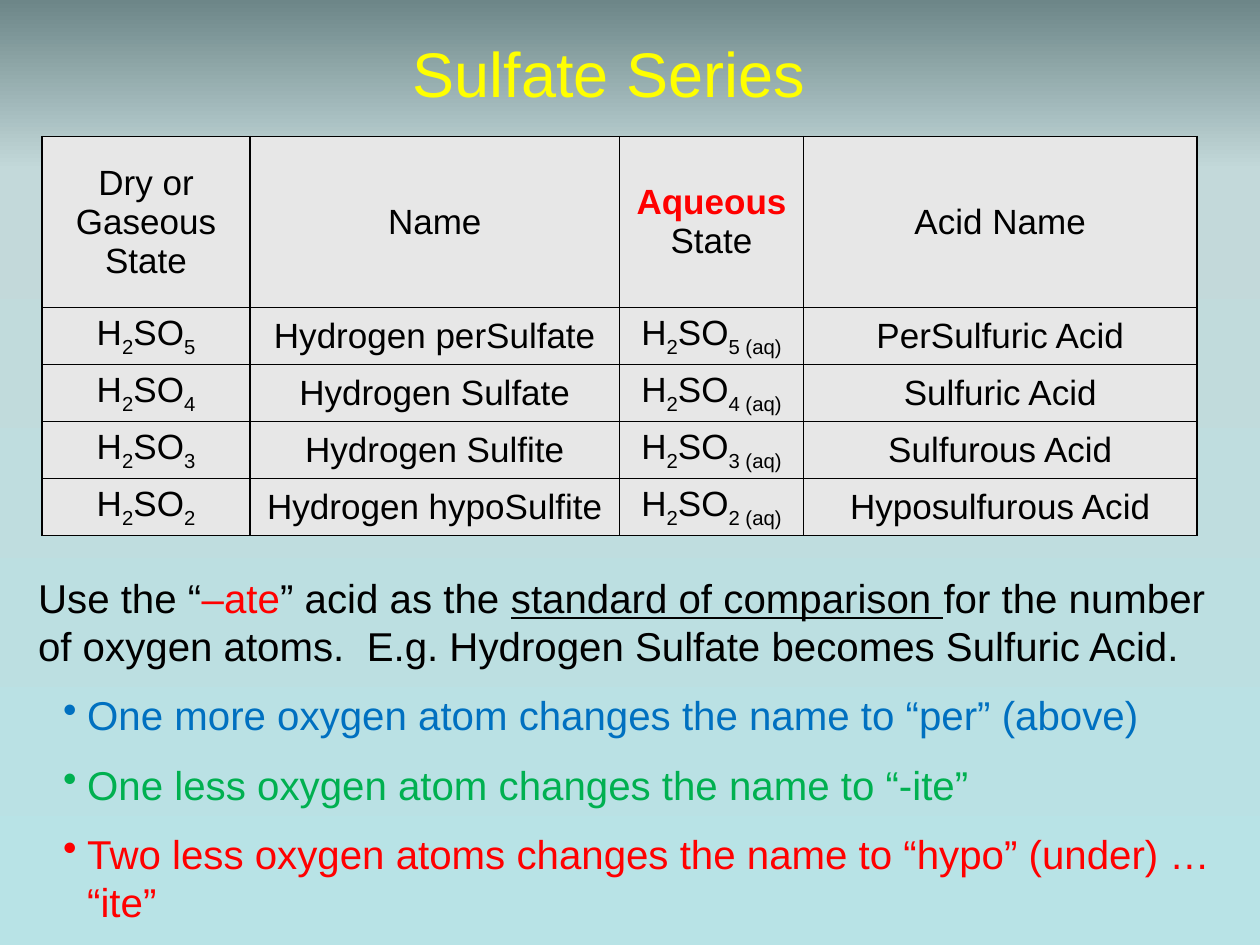
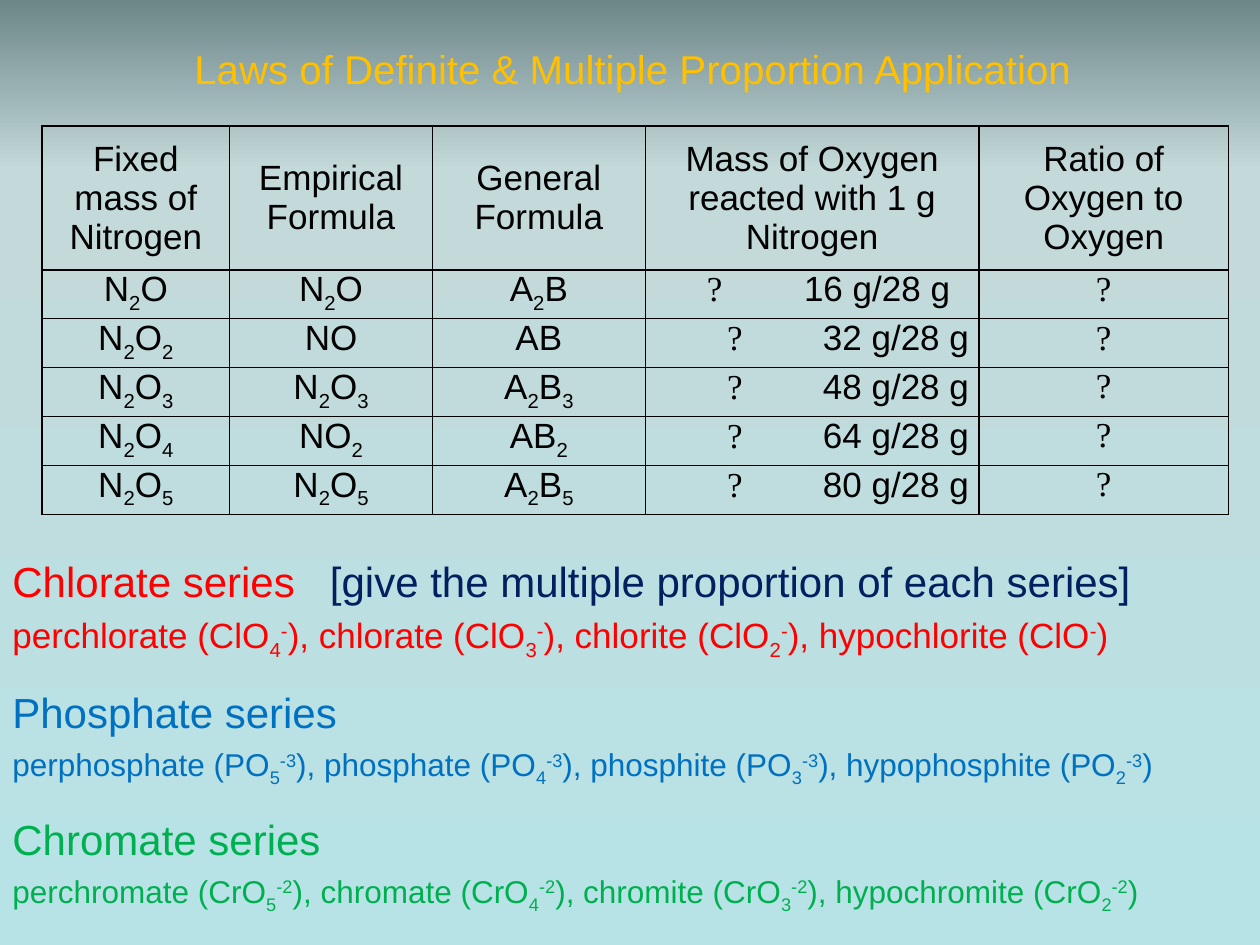
from dataclasses import dataclass

from pptx import Presentation, util as u
from pptx.dml.color import RGBColor
from pptx.enum import text as t
from pptx.oxml import parse_xml
from pptx.oxml.ns import nsdecls, qn
from lxml import etree


@dataclass(frozen=True)
class Theme:
    sans: str = "Arial"
    serif: str = "Times New Roman"
    black: str = "000000"
    yellow: str = "FFFF00"
    gold: str = "FFC000"
    red: str = "FF0000"
    blue: str = "0070C0"
    green: str = "00B050"
    navy: str = "002060"
    cell: str = "E7E7E7"
    sky: tuple = ((0, "6D8688"), (18, "C3D9DA"), (100, "B8E3E6"))
    big: int = 36
    head: int = 24
    body: int = 23
    grid: int = 20
    note: int = 18
    rule: int = 1


TH = Theme()
UNIT = u.Inches(10) // 120
SHIFT = {"_": "-25000", "^": "30000"}


def span(*units):
    return [u.Emu(round(n * UNIT)) for n in units]


def write(par, parts, size, color):
    for part in parts:
        words, look = (part, {}) if isinstance(part, str) else part
        for piece in words.split("|"):
            base = SHIFT.get(piece[:1])
            piece = piece[1:] if base else piece
            if not piece:
                continue
            run = par.add_run()
            run.text = piece
            font = run.font
            font.name = look.get("face", TH.sans)
            font.size = u.Pt(size)
            font.bold = look.get("bold", False)
            font.underline = look.get("line", False)
            font.color.rgb = RGBColor.from_string(look.get("color", color))
            if base:
                font._element.set("baseline", base)


def set_tabs(par, *stops):
    tabs = etree.SubElement(par._p.get_or_add_pPr(), qn("a:tabLst"))
    for stop in stops:
        etree.SubElement(tabs, qn("a:tab"), pos=str(u.Inches(stop)), algn="l")


def set_dent(par, left, first=0, mark=None):
    props = par._p.get_or_add_pPr()
    props.set("marL", str(u.Inches(left)))
    props.set("indent", str(u.Inches(first)))
    if mark:
        etree.SubElement(props, qn("a:buChar"), char=mark)


def add_page(deck):
    page = deck.slides.add_slide(deck.slide_layouts[6])
    stops = "".join(
        f'<a:gs pos="{pos * 1000}"><a:srgbClr val="{color}"/></a:gs>'
        for pos, color in TH.sky)
    page._element.cSld.insert(0, parse_xml(
        f'<p:bg {nsdecls("p", "a")}><p:bgPr><a:gradFill rotWithShape="1">'
        f'<a:gsLst>{stops}</a:gsLst><a:lin ang="5400000" scaled="0"/>'
        '</a:gradFill><a:effectLst/></p:bgPr></p:bg>'))
    return page


def add_box(page, box, wrap=True):
    frame = page.shapes.add_textbox(*span(*box)).text_frame
    frame.word_wrap = wrap
    return frame


def add_title(page, box, words, size, color):
    frame = add_box(page, box, wrap=False)
    frame.vertical_anchor = t.MSO_ANCHOR.MIDDLE
    par = frame.paragraphs[0]
    par.alignment = t.PP_ALIGN.CENTER
    write(par, [words], size, color)


def add_edges(cell):
    props = cell._tc.get_or_add_tcPr()
    for side in "LRTB":
        props.append(parse_xml(
            f'<a:ln{side} {nsdecls("a")} w="{u.Pt(TH.rule)}"><a:solidFill>'
            f'<a:srgbClr val="{TH.black}"/></a:solidFill></a:ln{side}>'))


def add_grid(page, box, cols, head, rows, fill=None, anchor=t.MSO_ANCHOR.TOP):
    wide, high = box[2:]
    table = page.shapes.add_table(len(rows), len(cols), *span(*box)).table
    table.first_row = table.horz_banding = False
    for col, part in zip(table.columns, cols):
        col.width = span(wide * part / sum(cols))[0]
    rest = (high - head) / (len(rows) - 1)
    for i, row in enumerate(rows):
        table.rows[i].height = span(rest if i else head)[0]
        for j, parts in enumerate(row):
            cell = table.cell(i, j)
            add_edges(cell)
            if fill:
                cell.fill.solid()
                cell.fill.fore_color.rgb = RGBColor.from_string(fill)
            else:
                cell.fill.background()
            cell.margin_left = cell.margin_right = u.Inches(0.07)
            cell.margin_top = cell.margin_bottom = 0
            cell.vertical_anchor = anchor if i else t.MSO_ANCHOR.MIDDLE
            par = cell.text_frame.paragraphs[0]
            if isinstance(parts, dict):
                set_tabs(par, *parts["tabs"])
                parts = parts["runs"]
            else:
                par.alignment = t.PP_ALIGN.CENTER
            write(par, [parts] if isinstance(parts, str) else parts,
                  TH.grid, TH.black)
    return table


def sub(name):
    return "".join(f"|_{c}|" if c.isdigit() else c for c in name)


def add_rules(page, box):
    frame = add_box(page, box)
    par = frame.paragraphs[0]
    set_dent(par, 0.12)
    write(par, [
        "Use the “", ("–ate", {"color": TH.red}), "” acid as the ",
        ("standard of comparison ", {"line": True}),
        "for the number of oxygen atoms.  "
        "E.g. Hydrogen Sulfate becomes Sulfuric Acid.",
    ], TH.body, TH.black)
    for words, color in (
        ("One more oxygen atom changes the name to “per” (above)", TH.blue),
        ("One less oxygen atom changes the name to “-ite”", TH.green),
        ("Two less oxygen atoms changes the name to “hypo” (under) … “ite”",
         TH.red),
    ):
        par = frame.add_paragraph()
        set_dent(par, 0.51, -0.19, "•")
        par.space_before = u.Pt(12)
        write(par, [words], TH.body, color)


def ions(stem, ion, charge, counts):
    names = f"per{stem}ate", f"{stem}ate", f"{stem}ite", f"hypo{stem}ite"
    return ", ".join(f"{name} ({ion}|_{n}|^{charge}|)"
                     for name, n in zip(names, counts))


def add_series(page, box):
    frame = add_box(page, box)
    groups = (
        ("Chlorate series", TH.red, TH.grid, ("chlor", "ClO", "-", "432 ")),
        ("Phosphate series", TH.blue, TH.note, ("phosph", "PO", "-3", "5432")),
        ("Chromate series", TH.green, TH.note, ("chrom", "CrO", "-2", "5432")),
    )
    for i, (name, color, size, (stem, ion, charge, counts)) in enumerate(groups):
        par = frame.add_paragraph() if i else frame.paragraphs[0]
        parts = [name]
        if i:
            par.space_before = u.Pt(14.5)
        else:
            set_tabs(par, 2.52)
            parts += ["\t", ("[give the multiple proportion of each series]",
                             {"color": TH.navy})]
        write(par, parts, TH.head, color)
        par = frame.add_paragraph()
        par.space_before = u.Pt(4.5)
        write(par, [ions(stem, ion, charge, [n.strip() for n in counts])],
              size, color)


def add_sulfate(deck):
    page = add_page(deck)
    add_title(page, (38, 0.4, 40, 13), "Sulfate Series", TH.big, TH.yellow)
    rows = [["Dry or Gaseous State", "Name",
             [("Aqueous", {"color": TH.red, "bold": True}), " State"],
             "Acid Name"]]
    for n, name, acid in (
        (5, "perSulfate", "PerSulfuric"),
        (4, "Sulfate", "Sulfuric"),
        (3, "Sulfite", "Sulfurous"),
        (2, "hypoSulfite", "Hyposulfurous"),
    ):
        rows.append([sub(f"H2SO{n}"), f"Hydrogen {name}",
                     f"H|_2|SO|_{n} (aq)", f"{acid} Acid"])
    add_grid(page, (4, 13, 110, 38), (1.65, 2.93, 1.46, 3.12), 16.3, rows,
             TH.cell, t.MSO_ANCHOR.MIDDLE)
    add_rules(page, (1, 54, 118, 34))


def add_laws(deck):
    page = add_page(deck)
    add_title(page, (9, 0, 102.7, 13),
              "Laws of Definite & Multiple Proportion Application",
              TH.body, TH.gold)
    add_series(page, (0, 52.3, 118, 36))
    ask = ("?", {"face": TH.serif})
    rows = [["Fixed mass of Nitrogen", "Empirical Formula", "General Formula",
             "Mass of Oxygen reacted with 1 g Nitrogen",
             "Ratio of Oxygen to Oxygen"]]
    for i, (fixed, plain, form) in enumerate((
        ("N2O", "N2O", "A2B"),
        ("N2O2", "NO", "AB"),
        ("N2O3", "N2O3", "A2B3"),
        ("N2O4", "NO2", "AB2"),
        ("N2O5", "N2O5", "A2B5"),
    )):
        mass = {"tabs": (0.58, 1.34) if i else (0.42, 1.19),
                "runs": ["\t", ask, f"\t{16 * (i + 1)} g/28 g"]}
        rows.append([sub(fixed), sub(plain), sub(form), mass, [ask]])
    add_grid(page, (4, 12, 113, 37), (1.49, 1.61, 1.69, 2.65, 1.98), 13.7, rows)


def main():
    deck = Presentation()
    deck.slide_width, deck.slide_height = span(120, 90)
    add_sulfate(deck)
    add_laws(deck)
    deck.save("out.pptx")


if __name__ == "__main__":
    main()
